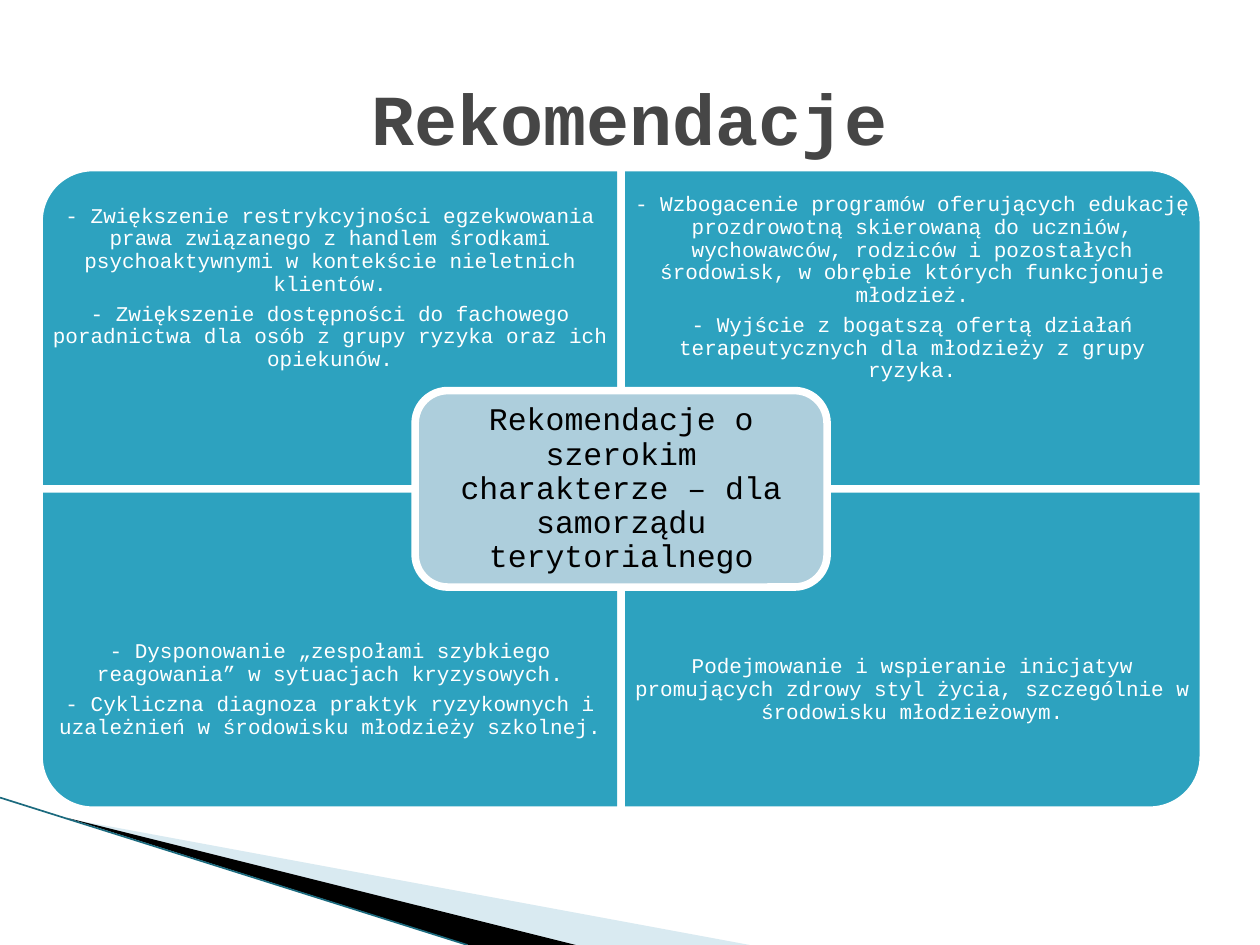
from lxml.etree import SubElement
from pptx import Presentation
from pptx.dml.color import RGBColor
from pptx.enum.shapes import MSO_CONNECTOR, MSO_SHAPE
from pptx.enum.text import MSO_ANCHOR, PP_ALIGN
from pptx.oxml.ns import qn
from pptx.util import Inches, Pt

FONT = "Courier New"
COLORS = {
    "teal": "2DA2BF", "center": "ADCEDC", "white": "FFFFFF", "black": "000000",
    "title": "464646", "wedge": "A0CBDC", "edge": "1B6A7E",
}

# Rotation of the panel, then its paragraphs; row by row
QUADRANTS = [
    (270, ["- Zwiększenie restrykcyjności egzekwowania prawa związanego z handlem "
           "środkami psychoaktywnymi w kontekście nieletnich klientów.",
           "- Zwiększenie dostępności do fachowego poradnictwa dla osób z grupy "
           "ryzyka oraz ich opiekunów."]),
    (0, ["- Wzbogacenie programów oferujących edukację prozdrowotną skierowaną do "
         "uczniów, wychowawców, rodziców i pozostałych środowisk, w obrębie których "
         "funkcjonuje młodzież.",
         "- Wyjście z bogatszą ofertą działań terapeutycznych dla młodzieży z grupy "
         "ryzyka."]),
    (180, ["- Dysponowanie „zespołami szybkiego reagowania” w sytuacjach kryzysowych.",
           "- Cykliczna diagnoza praktyk ryzykownych i uzależnień w środowisku "
           "młodzieży szkolnej."]),
    (90, ["Podejmowanie i wspieranie inicjatyw promujących zdrowy styl życia, "
          "szczególnie w środowisku młodzieżowym."]),
]
CENTER_TEXT = "Rekomendacje o szerokim charakterze – dla samorządu terytorialnego"


def color(name):
    return RGBColor.from_string(COLORS[name])


def add_text(slide, box, paragraphs, size, color_name, inset=0.09, spacing=0.9, bold=False):
    shape = slide.shapes.add_textbox(*map(Inches, box))
    frame = shape.text_frame
    frame.word_wrap = True
    frame.vertical_anchor = MSO_ANCHOR.MIDDLE
    frame.margin_left = frame.margin_right = Inches(inset)
    frame.margin_top = frame.margin_bottom = Inches(inset)
    for index, text in enumerate(paragraphs):
        paragraph = frame.add_paragraph() if index else frame.paragraphs[0]
        paragraph.text = text
        paragraph.alignment = PP_ALIGN.CENTER
        paragraph.line_spacing = spacing
        if index:
            paragraph.space_before = Pt(0.35 * size)
        paragraph.font.name = FONT
        paragraph.font.size = Pt(size)
        paragraph.font.bold = bold
        paragraph.font.color.rgb = color(color_name)


def add_panel(slide, preset, box, fill, rotation=0):
    left, top, width, height = box
    if rotation % 180:  # a turned shape swaps its sides about the same centre
        left, top = left + (width - height) / 2, top + (height - width) / 2
        width, height = height, width
    shape = slide.shapes.add_shape(preset, *map(Inches, (left, top, width, height)))
    shape.rotation = rotation
    shape.shadow.inherit = False
    shape.fill.solid()
    shape.fill.fore_color.rgb = color(fill)
    shape.line.color.rgb = color("white")
    shape.line.width = Pt(4.33)


def add_wedge(slide, points, fill, opacity=None):
    start, *rest = [(Inches(x), Inches(y)) for x, y in points]
    builder = slide.shapes.build_freeform(*start, scale=1.0)
    builder.add_line_segments(rest)
    shape = builder.convert_to_shape()
    shape.shadow.inherit = False
    shape.fill.solid()
    shape.fill.fore_color.rgb = color(fill)
    shape.line.fill.background()
    if opacity:
        rgb = shape._element.spPr.find(qn("a:solidFill")).find(qn("a:srgbClr"))
        SubElement(rgb, qn("a:alpha"), val=str(opacity * 1000))


def add_corner_decoration(slide, box):
    left, top, width, height = box
    bottom = top + height
    add_wedge(slide, [(left + 0.55, top + 0.17), (left + 5.95, bottom),
                      (left + 4.56, bottom)], "wedge", opacity=40)
    add_wedge(slide, [(left + 0.53, top + 0.16), (left + 4.57, bottom),
                      (left + 3.72, bottom)], "black")
    line = slide.shapes.add_connector(
        MSO_CONNECTOR.STRAIGHT, Inches(left), Inches(top), Inches(left + 3.71), Inches(bottom))
    line.line.color.rgb = color("edge")
    line.line.width = Pt(0.95)
    SubElement(line._element.spPr, qn("a:effectLst"))


def add_matrix(slide, box):
    left, top, width, height = box
    cell_width, cell_height = width / 2, height / 2
    text_height = cell_height * 0.75  # the centre label covers the rest

    # Four outer panels
    for index, (rotation, paragraphs) in enumerate(QUADRANTS):
        row, column = divmod(index, 2)
        x, y = left + column * cell_width, top + row * cell_height
        add_panel(slide, MSO_SHAPE.ROUND_1_RECTANGLE,
                  (x, y, cell_width, cell_height), "teal", rotation)
        text_top = y + row * (cell_height - text_height)
        add_text(slide, (x, text_top, cell_width, text_height), paragraphs, 12, "white")

    # Centre label
    label_width, label_height, pad = 3.27, 1.56, 0.08
    x, y = left + (width - label_width) / 2, top + (height - label_height) / 2
    add_panel(slide, MSO_SHAPE.ROUNDED_RECTANGLE, (x, y, label_width, label_height), "center")
    add_text(slide, (x + pad, y + pad, label_width - 2 * pad, label_height - 2 * pad),
             [CENTER_TEXT], 18, "black", inset=0.07)


def main():
    presentation = Presentation()
    presentation.slide_width, presentation.slide_height = Inches(10), Inches(7.5)
    slide = presentation.slides.add_slide(presentation.slide_layouts[6])
    add_corner_decoration(slide, (0, 6.33, 5.95, 1.17))
    add_matrix(slide, (0.31, 1.33, 9.24, 5.1))
    add_text(slide, (0.5, 0.3, 9, 1.25), ["Rekomendacje"], 41, "title",
             inset=0.05, spacing=1.0, bold=True)
    presentation.save("out.pptx")


if __name__ == "__main__":
    main()
